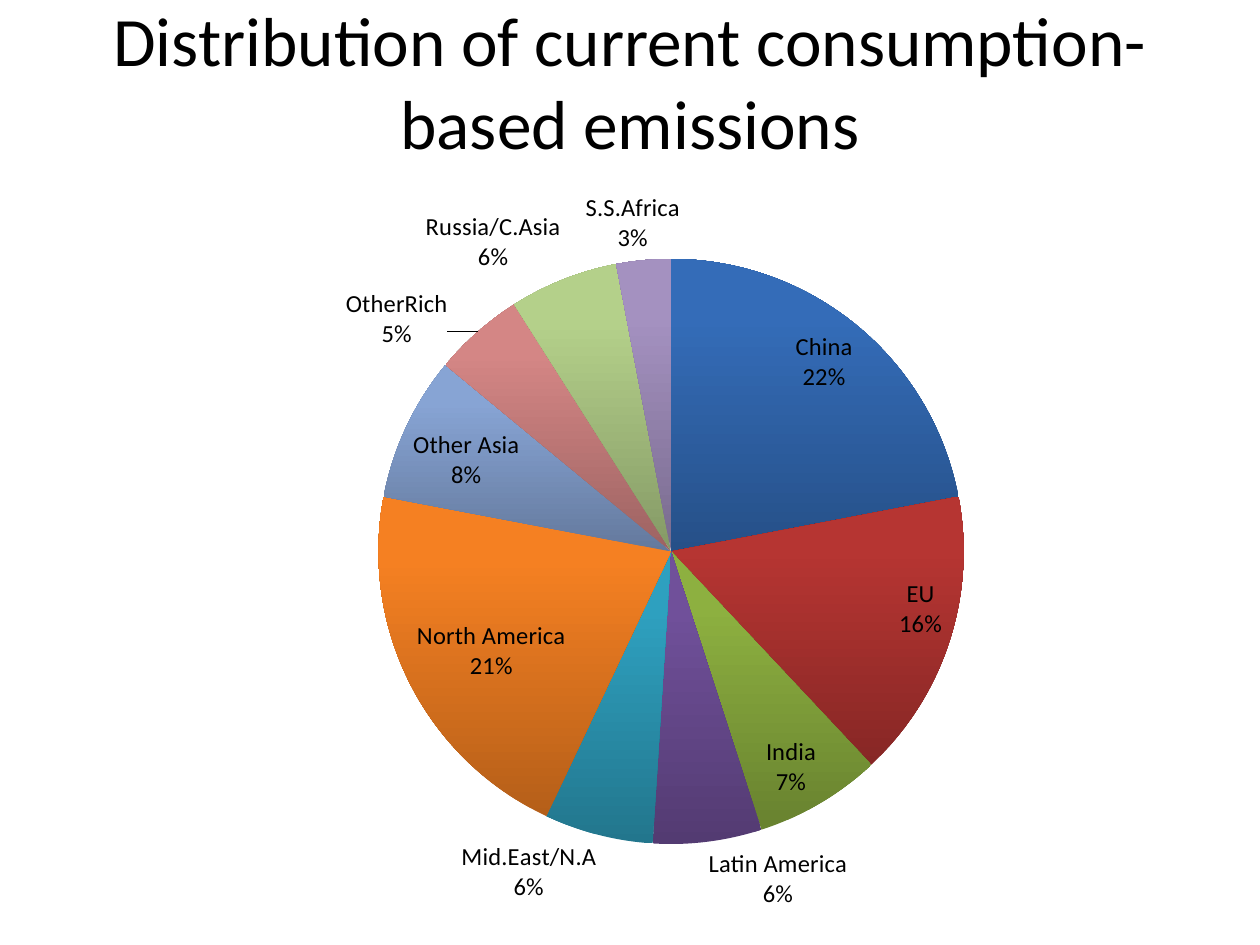
from lxml import etree
from pptx import Presentation
from pptx.chart.data import CategoryChartData
from pptx.dml.color import RGBColor
from pptx.enum.chart import XL_CHART_TYPE, XL_LABEL_POSITION
from pptx.enum.text import MSO_ANCHOR, PP_ALIGN
from pptx.oxml.ns import qn
from pptx.util import Pt

EMU_PER_PX = 914400 / 126
FONT = "Calibri"
INSIDE = XL_LABEL_POSITION.INSIDE_END
OUTSIDE = XL_LABEL_POSITION.OUTSIDE_END

COLORS = {
    "text": "000000",
    "China": "346CB8",
    "EU": "B63532",
    "India": "8DB040",
    "Latin America": "70509A",
    "Mid.East/N.A": "2EA0BF",
    "North America": "F58022",
    "Other Asia": "87A4D4",
    "OtherRich": "D48685",
    "Russia/C.Asia": "B4D08A",
    "S.S.Africa": "A491C0",
}

# Region, share in percent, label position
EMISSIONS = [
    ("China", 22, INSIDE),
    ("EU", 16, INSIDE),
    ("India", 7, INSIDE),
    ("Latin America", 6, OUTSIDE),
    ("Mid.East/N.A", 6, OUTSIDE),
    ("North America", 21, INSIDE),
    ("Other Asia", 8, INSIDE),
    ("OtherRich", 5, OUTSIDE),
    ("Russia/C.Asia", 6, OUTSIDE),
    ("S.S.Africa", 3, OUTSIDE),
]
# Label offsets as fractions of the chart size
LABEL_SHIFTS = {
    "OtherRich": {"x": -0.02, "y": 0.03},
    "S.S.Africa": {"x": 0.03, "y": 0},
}
PIE_AREA = {
    "layoutTarget": "inner", "xMode": "edge", "yMode": "edge",
    "x": 0.3, "y": 0.11, "w": 0.47, "h": 0.78,
}


def px(length):
    return round(length * EMU_PER_PX)


def shade(color, factor):
    return RGBColor(*(round(channel * factor) for channel in color))


def set_font(font, size):
    font.name = FONT
    font.size = Pt(size)
    font.color.rgb = RGBColor.from_string(COLORS["text"])


def make_layout(settings):
    layout = etree.Element(qn("c:layout"))
    manual = etree.SubElement(layout, qn("c:manualLayout"))
    for name, value in settings.items():
        etree.SubElement(manual, qn(f"c:{name}")).set("val", str(value))
    return layout


def add_title(slide, text):
    shape = slide.shapes.add_textbox(px(63), px(16), px(1134), px(129))
    text_frame = shape.text_frame
    text_frame.word_wrap = True
    text_frame.vertical_anchor = MSO_ANCHOR.MIDDLE
    text_frame.text = text
    paragraph = text_frame.paragraphs[0]
    paragraph.alignment = PP_ALIGN.CENTER
    set_font(paragraph.runs[0].font, 39.6)


def fill_slice(point, color):
    # Dark at the bottom, full colour from 80 percent upwards
    fill = point.format.fill
    fill.gradient()
    fill.gradient_angle = 90
    bottom, top = fill.gradient_stops
    bottom.color.rgb = shade(color, 0.74)
    top.color.rgb = color
    top.position = 0.8
    point.format.line.fill.background()


def show_region_and_percent(labels):
    shown = {"showVal": "0", "showCatName": "1", "showPercent": "1"}
    for name, value in shown.items():
        labels.find(qn(f"c:{name}")).set("val", value)
    separator = etree.Element(qn("c:separator"))
    separator.text = "\n"
    labels.find(qn("c:showBubbleSize")).addnext(separator)


def add_pie(slide):
    data = CategoryChartData()
    data.categories = [region for region, _, _ in EMISSIONS]
    data.add_series("Series 1", [share for _, share, _ in EMISSIONS])
    chart = slide.shapes.add_chart(
        XL_CHART_TYPE.PIE, px(5), px(175), px(1245), px(753), data
    ).chart
    chart.has_legend = False
    chart.has_title = False
    set_font(chart.font, 10)

    plot = chart.plots[0]
    plot.vary_by_categories = True
    series = plot.series[0]

    # Slices and their label positions
    for index, (region, _, position) in enumerate(EMISSIONS):
        point = series.points[index]
        fill_slice(point, RGBColor.from_string(COLORS[region]))
        set_font(point.data_label.font, 14)
        point.data_label.position = position

    # Label content and manual shifts
    for label, (region, _, _) in zip(series._element.iter(qn("c:dLbl")), EMISSIONS):
        show_region_and_percent(label)
        if region in LABEL_SHIFTS:
            for layout in label.findall(qn("c:layout")):
                label.remove(layout)
            label.find(qn("c:idx")).addnext(make_layout(LABEL_SHIFTS[region]))

    # Fixed pie area
    plot_area = chart._chartSpace.find(f".//{qn('c:plotArea')}")
    for layout in plot_area.findall(qn("c:layout")):
        plot_area.remove(layout)
    plot_area.insert(0, make_layout(PIE_AREA))


def main():
    presentation = Presentation()
    presentation.slide_width = px(1260)
    presentation.slide_height = px(945)
    slide = presentation.slides.add_slide(presentation.slide_layouts[6])
    add_title(slide, "Distribution of current consumption-based emissions")
    add_pie(slide)
    presentation.save("out.pptx")


if __name__ == "__main__":
    main()
